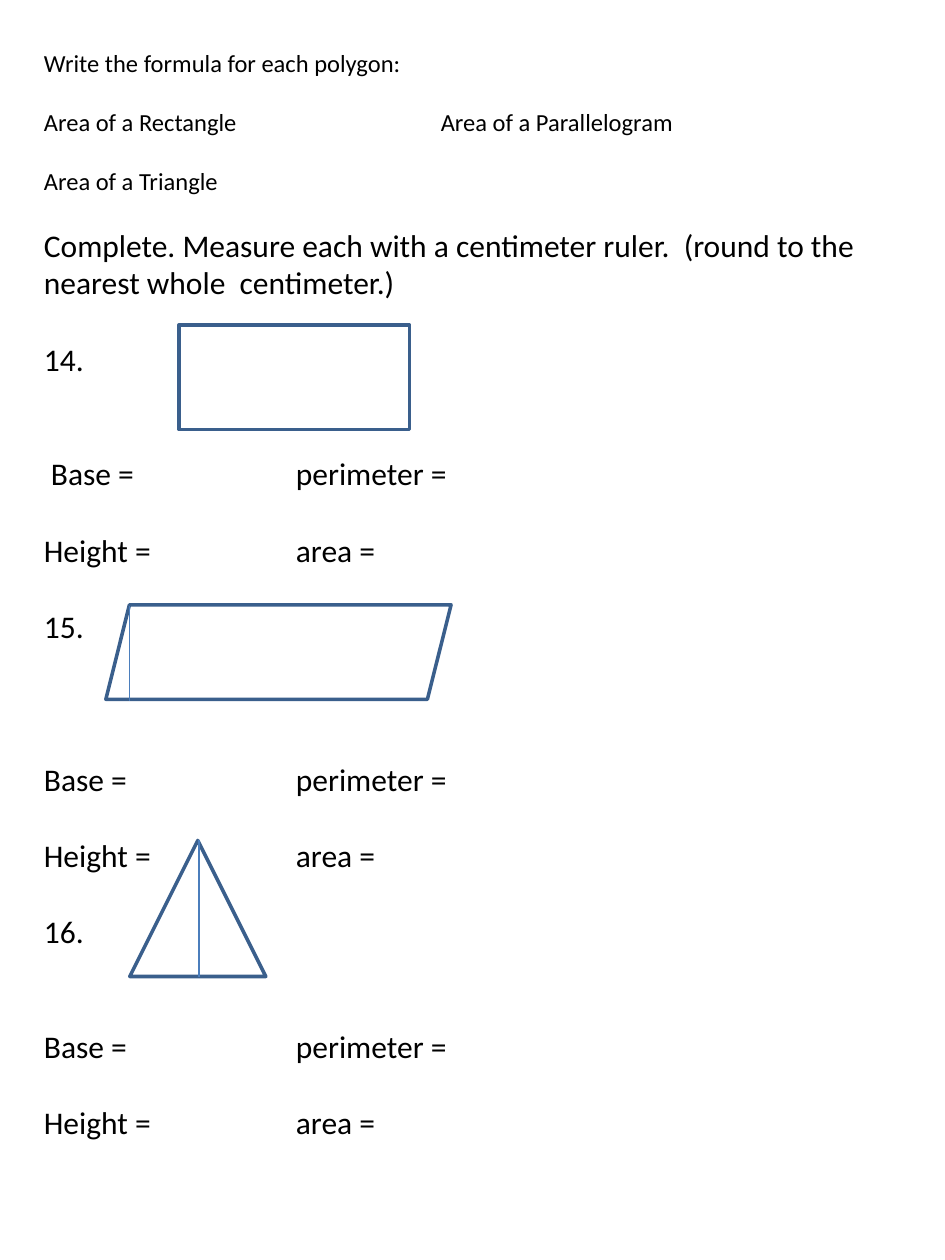
from dataclasses import dataclass

from pptx import Presentation
from pptx.dml.color import RGBColor
from pptx.enum.shapes import MSO_CONNECTOR, MSO_SHAPE
from pptx.enum.text import MSO_AUTO_SIZE
from pptx.oxml.ns import qn
from pptx.util import Inches, Pt
from lxml.etree import SubElement


@dataclass(frozen=True)
class Theme:
    font: str = "Calibri"
    text: RGBColor = RGBColor(0x00, 0x00, 0x00)
    fill: RGBColor = RGBColor(0xFF, 0xFF, 0xFF)
    outline: RGBColor = RGBColor(0x3A, 0x5F, 0x8C)
    altitude: RGBColor = RGBColor(0x4B, 0x7E, 0xBC)
    formula_size: int = 14
    exercise_size: int = 18
    line_height: float = 1.22


THEME = Theme()
FORMULA_TAB = 3.15
ANSWER_TAB = 2
FORMULA_LINES = [
    "Write the formula for each polygon:",
    "Area of a Rectangle\tArea of a Parallelogram",
    "Area of a Triangle",
]
INSTRUCTION = (
    "Complete. Measure each with a centimeter ruler.  "
    "(round to the nearest whole  centimeter.)"
)
# Number, base label, and lines left free for the figure
EXERCISES = [("14.", " Base =", 2), ("15.", "Base =", 3), ("16.", "Base =", 2)]


def add_tab_stop(para, position):
    tabs = SubElement(para._p.get_or_add_pPr(), qn("a:tabLst"))
    SubElement(tabs, qn("a:tab"), pos=str(Inches(position)), algn="l")


def add_line(frame, text, size, gap, tab):
    """Append a paragraph with a space of `gap` points above it."""
    para = frame.paragraphs[0] if not frame.text else frame.add_paragraph()
    para.text = text
    para.space_before = Pt(gap)
    if "\t" in text:
        add_tab_stop(para, tab)
    for span in para.runs:
        span.font.name = THEME.font
        span.font.size = Pt(size)
        span.font.color.rgb = THEME.text


def add_worksheet_text(page):
    box = page.shapes.add_textbox(Inches(0.25), Inches(0.33), Inches(7.08), Inches(9.39))
    frame = box.text_frame
    frame.word_wrap = True
    frame.auto_size = MSO_AUTO_SIZE.SHAPE_TO_FIT_TEXT

    formula_gap = THEME.formula_size * THEME.line_height
    for index, text in enumerate(FORMULA_LINES):
        gap = formula_gap if index else 0
        add_line(frame, text, THEME.formula_size, gap, FORMULA_TAB)
    add_line(frame, INSTRUCTION, THEME.exercise_size, formula_gap, ANSWER_TAB)

    exercise_gap = THEME.exercise_size * THEME.line_height
    for number, base, free_lines in EXERCISES:
        for text, lines in (
            (number, 1),
            (f"{base}\tperimeter =", free_lines),
            ("Height =\tarea =", 1),
        ):
            add_line(frame, text, THEME.exercise_size, lines * exercise_gap, ANSWER_TAB)


def add_polygon(page, kind, left, top, width, height):
    polygon = page.shapes.add_shape(
        kind, Inches(left), Inches(top), Inches(width), Inches(height)
    )
    polygon.shadow.inherit = False
    polygon.fill.solid()
    polygon.fill.fore_color.rgb = THEME.fill
    polygon.line.color.rgb = THEME.outline
    polygon.line.width = Pt(2)


def add_altitude(page, x, top, height):
    altitude = page.shapes.add_connector(
        MSO_CONNECTOR.STRAIGHT, Inches(x), Inches(top), Inches(x), Inches(top + height)
    )
    altitude.line.color.rgb = THEME.altitude
    altitude.line.width = Pt(0.75)
    SubElement(altitude._element.spPr, qn("a:effectLst"))


def main():
    deck = Presentation()
    deck.slide_width, deck.slide_height = Inches(7.5), Inches(10)
    page = deck.slides.add_slide(deck.slide_layouts[6])

    add_worksheet_text(page)
    add_polygon(page, MSO_SHAPE.RECTANGLE, 1.42, 2.58, 1.83, 0.83)
    add_polygon(page, MSO_SHAPE.PARALLELOGRAM, 0.84, 4.8, 2.74, 0.75)
    add_altitude(page, 1.03, 4.81, 0.75)
    add_polygon(page, MSO_SHAPE.ISOSCELES_TRIANGLE, 1.03, 6.67, 1.08, 1.08)
    add_altitude(page, 1.58, 6.67, 1.08)

    deck.save("out.pptx")


if __name__ == "__main__":
    main()
